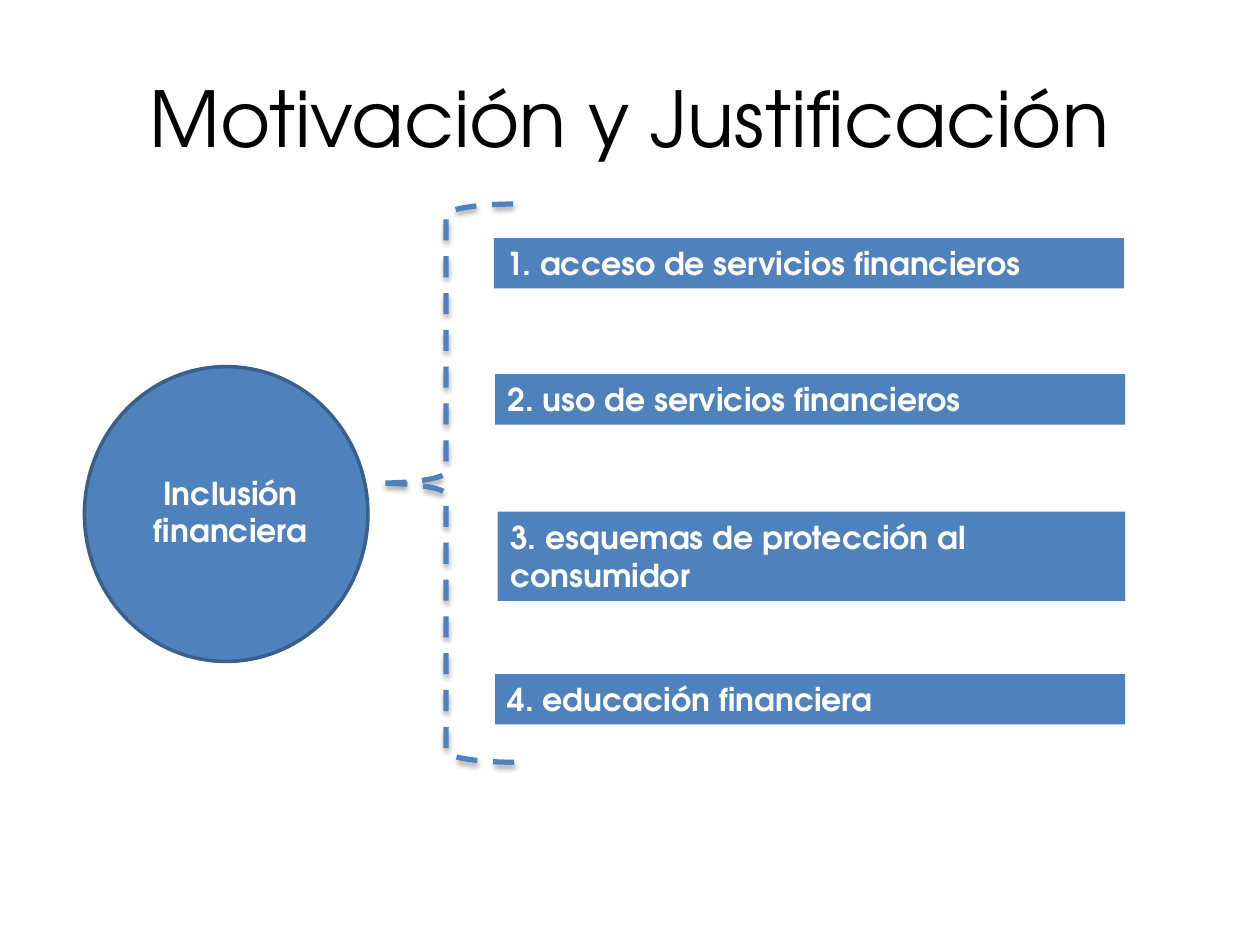
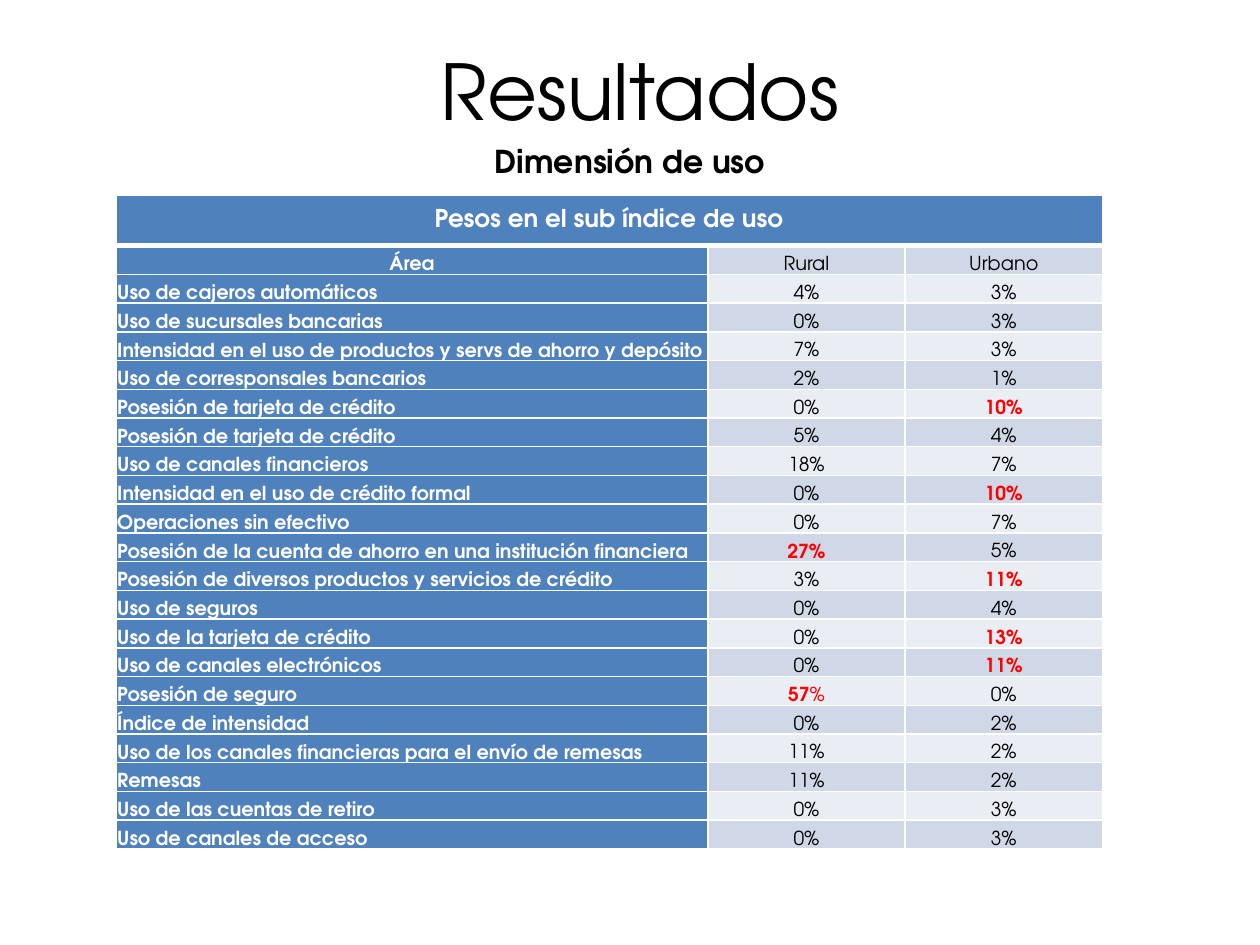
import pptx
import pptx.util
import pptx.dml.color
import pptx.enum.dml
import pptx.enum.shapes
import pptx.enum.text
import pptx.oxml
import pptx.oxml.ns
from lxml import etree

PX = 9144
FONT = "TeX Gyre Adventor"
HUES = {"blue": "4F81BD", "edge": "3A5F8C", "dark": "D0D8E8", "pale": "E9EDF4",
        "white": "FFFFFF", "black": "000000", "red": "FF0000"}
ALIGN = pptx.enum.text.PP_ALIGN
ANCHOR = pptx.enum.text.MSO_ANCHOR
KIND = pptx.enum.shapes.MSO_SHAPE

BARS = [
    ("1. acceso de servicios financieros", 0, 0, 500, 40),
    ("2. uso de servicios financieros", 1, 108, 500, 40),
    ("3. esquemas de protección al consumidor", 3, 217, 498, 71),
    ("4. educación financiera", 1, 346, 500, 40),
]
ROWS = [
    ("Uso de cajeros automáticos", 4, 3),
    ("Uso de sucursales bancarias", 0, 3),
    ("Intensidad en el uso de productos y servs de ahorro y depósito", 7, 3),
    ("Uso de corresponsales bancarios", 2, 1),
    ("Posesión de tarjeta de crédito", 0, 10),
    ("Posesión de tarjeta de crédito", 5, 4),
    ("Uso de canales financieros", 18, 7),
    ("Intensidad en el uso de crédito formal", 0, 10),
    ("Operaciones sin efectivo", 0, 7),
    ("Posesión de la cuenta de ahorro en una institución financiera", 27, 5),
    ("Posesión de diversos productos y servicios de crédito", 3, 11),
    ("Uso de seguros", 0, 4),
    ("Uso de la tarjeta de crédito", 0, 13),
    ("Uso de canales electrónicos", 0, 11),
    ("Posesión de seguro", 57, 0),
    ("Índice de intensidad", 0, 2),
    ("Uso de los canales financieras para el envío de remesas", 11, 2),
    ("Remesas", 11, 2),
    ("Uso de las cuentas de retiro", 0, 3),
    ("Uso de canales de acceso", 0, 3),
]
LIMITS = (20, 10)


def color(name):
    return pptx.dml.color.RGBColor.from_string(HUES[name])


def emu(box):
    return [n * PX for n in box]


def style(run, size, hue, bold):
    run.font.name = FONT
    run.font.size = pptx.util.Pt(size)
    run.font.color.rgb = color(hue)
    run.font.bold = bold


def write(frame, text, size, hue="white", bold=True, align=ALIGN.CENTER):
    para = frame.paragraphs[0]
    para.text = text
    para.alignment = align
    for run in para.runs:
        style(run, size, hue, bold)
    return para


def label(slide, box, text, size, hue="black", bold=False, anchor=ANCHOR.MIDDLE):
    frame = slide.shapes.add_textbox(*emu(box)).text_frame
    frame.word_wrap = True
    frame.vertical_anchor = anchor
    write(frame, text, size, hue, bold)


def shape(slide, kind, box, fill=None, line=None, width=0):
    item = slide.shapes.add_shape(kind, *emu(box))
    item.shadow.inherit = False
    if fill:
        item.fill.solid()
        item.fill.fore_color.rgb = color(fill)
    else:
        item.fill.background()
    if line:
        item.line.color.rgb = color(line)
        item.line.width = pptx.util.Pt(width)
    else:
        item.line.fill.background()
    return item


def circle(slide, box):
    x, y, w, h = box
    shape(slide, KIND.OVAL, box, "blue", "edge", 2)
    label(slide, (x + 41, y + 80, 150, 78), "Inclusión financiera", 18,
          "white", True, ANCHOR.TOP)


def bars(slide, left, top):
    for text, x, y, w, h in BARS:
        bar = shape(slide, KIND.RECTANGLE, (left + x, top + y, w, h), "blue")
        bar.text_frame.vertical_anchor = ANCHOR.TOP
        write(bar.text_frame, text, 18, align=ALIGN.LEFT)


def brace(slide, box):
    item = shape(slide, KIND.LEFT_BRACE, box, line="blue", width=3)
    item.line.dash_style = pptx.enum.dml.MSO_LINE.DASH
    effects = item._element.spPr.find(pptx.oxml.ns.qn("a:effectLst"))
    effects.append(pptx.oxml.parse_xml(
        f'<a:outerShdw {pptx.oxml.ns.nsdecls("a")} blurRad="{pptx.util.Pt(3.1)}" '
        f'dist="{pptx.util.Pt(1.8)}" dir="5400000" rotWithShape="0">'
        f'<a:srgbClr val="{HUES["black"]}"><a:alpha val="35000"/></a:srgbClr>'
        '</a:outerShdw>'))


def border(cell, top=1, base=1):
    props = cell._tc.get_or_add_tcPr()
    sides = (("lnL", 1), ("lnR", 1), ("lnT", top), ("lnB", base))
    for spot, (side, width) in enumerate(sides):
        line = etree.Element(pptx.oxml.ns.qn(f"a:{side}"), w=str(pptx.util.Pt(width)))
        fill = etree.SubElement(line, pptx.oxml.ns.qn("a:solidFill"))
        etree.SubElement(fill, pptx.oxml.ns.qn("a:srgbClr"), val=HUES["white"])
        props.insert(spot, line)


def paint(cell, fill, anchor=ANCHOR.BOTTOM, top=1, base=1):
    cell.fill.solid()
    cell.fill.fore_color.rgb = color(fill)
    cell.vertical_anchor = anchor
    cell.margin_left = cell.margin_right = cell.margin_top = PX
    cell.margin_bottom = 0
    border(cell, top, base)


def value(cell, num, limit):
    high = num >= limit
    para = write(cell.text_frame, f"{num}%", 11, "red" if high else "black", high)
    if num == 57:
        para.runs[0].text = str(num)
        sign = para.add_run()
        sign.text = "%"
        style(sign, 11, "red", False)


def grid(slide, box):
    x, y, w, h = box
    count = len(ROWS) + 2
    table = slide.shapes.add_table(count, 3, *emu(box)).table
    table.first_row = table.horz_banding = False
    for col, part in zip(table.columns, (0.6, 0.2, 0.2)):
        col.width = int(w * part * PX)
    head = 40
    for row in table.rows:
        row.height = (h - head) * PX // (count - 1)
    table.rows[0].height = head * PX
    for cell in table.rows[0].cells:
        paint(cell, "blue", ANCHOR.MIDDLE, base=3)
    table.cell(0, 0).merge(table.cell(0, 2))
    write(table.cell(0, 0).text_frame, "Pesos en el sub índice de uso", 14)
    for r in range(1, count):
        band = "dark" if r % 2 else "pale"
        for cell, fill in zip(table.rows[r].cells, ("blue", band, band)):
            paint(cell, fill, top=3 if r == 1 else 1)
    write(table.cell(1, 0).text_frame, "Área", 11)
    for c, name in enumerate(("Rural", "Urbano"), 1):
        write(table.cell(1, c).text_frame, name, 11, "black", False)
    for r, (name, *nums) in enumerate(ROWS, 2):
        write(table.cell(r, 0).text_frame, name, 11, align=ALIGN.LEFT)
        for c, (num, limit) in enumerate(zip(nums, LIMITS), 1):
            value(table.cell(r, c), num, limit)


def motive(slide):
    label(slide, (50, 30, 900, 125), "Motivación y Justificación", 44)
    circle(slide, (67, 291, 225, 234))
    bars(slide, 392, 189)
    brace(slide, (300, 162, 108, 443))


def results(slide):
    label(slide, (50, 100, 900, 55), "Dimensión de uso", 18, bold=True)
    grid(slide, (92, 155, 783, 519))
    label(slide, (58, 9, 900, 125), "Resultados", 44)


def main():
    deck = pptx.Presentation()
    deck.slide_width, deck.slide_height = emu((1000, 750))
    for build in (motive, results):
        build(deck.slides.add_slide(deck.slide_layouts[6]))
    deck.save("out.pptx")


if __name__ == "__main__":
    main()
